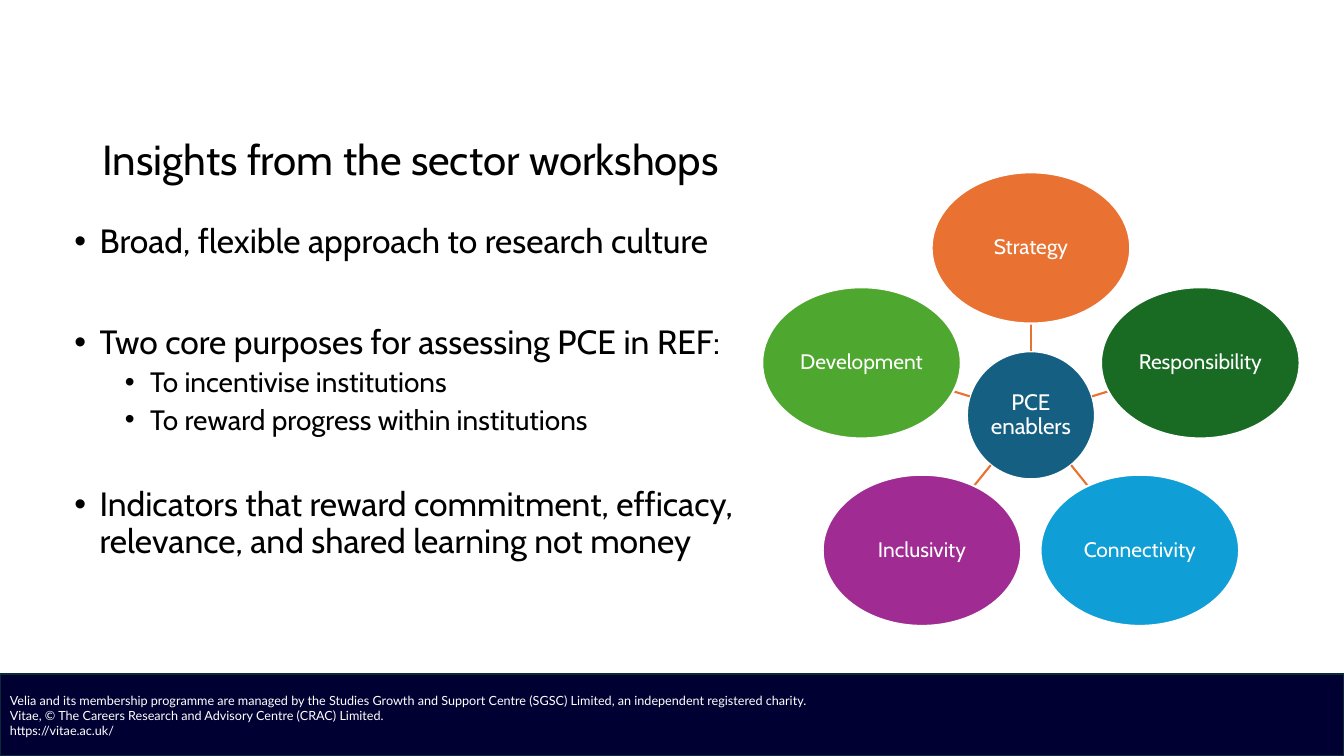
from math import hypot

from lxml import etree
from pptx import Presentation
from pptx.dml.color import RGBColor
from pptx.enum.shapes import MSO_CONNECTOR, MSO_SHAPE
from pptx.enum.text import MSO_ANCHOR, PP_ALIGN
from pptx.oxml.ns import qn
from pptx.util import Inches, Pt

OVAL = MSO_SHAPE.OVAL
RECTANGLE = MSO_SHAPE.RECTANGLE
STRAIGHT = MSO_CONNECTOR.STRAIGHT
MIDDLE = MSO_ANCHOR.MIDDLE
LEFT = PP_ALIGN.LEFT
CENTER = PP_ALIGN.CENTER

BLACK = RGBColor(0x00, 0x00, 0x00)
WHITE = RGBColor(0xFF, 0xFF, 0xFF)
NAVY = RGBColor(0x01, 0x00, 0x32)
DARK_TEAL = RGBColor(0x09, 0x2A, 0x39)
BLUE = RGBColor(0x15, 0x60, 0x82)
ORANGE = RGBColor(0xE9, 0x71, 0x32)
DARK_GREEN = RGBColor(0x19, 0x6B, 0x24)
SKY = RGBColor(0x0F, 0x9E, 0xD5)
PURPLE = RGBColor(0xA0, 0x2B, 0x93)
GREEN = RGBColor(0x4E, 0xA7, 0x2E)

FOOTER_LINES = [
    "Velia and its membership programme are managed by the Studies Growth and Support Centre (SGSC) Limited, an independent registered charity.",
    "Vitae, © The Careers Research and Advisory Centre (CRAC) Limited.",
    "https://vitae.ac.uk/",
]

BULLETS = [
    ("Broad, flexible approach to research culture", 0, 0),
    ("Two core purposes for assessing PCE in REF:", 0, 46),
    ("To incentivise institutions", 1, 5),
    ("To reward progress within institutions", 1, 5),
    ("Indicators that reward commitment, efficacy,\v"
     "relevance, and shared learning not money", 0, 37),
]
LEVEL_SIZES = [24, 20]
LEVEL_INDENTS = [0.25, 0.75]

HUB_DIAMETER = 1.27
PETAL_WIDTH, PETAL_HEIGHT = 1.97, 1.5
PETALS = [
    ("Strategy", ORANGE, 0, -1.66),
    ("Responsibility", DARK_GREEN, 1.68, -0.52),
    ("Connectivity", SKY, 1.08, 1.34),
    ("Inclusivity", PURPLE, -1.08, 1.34),
    ("Development", GREEN, -1.68, -0.52),
]


def set_font(paragraph, size, color, name="Cabin"):
    for attribute, value in {"size": Pt(size), "name": name}.items():
        setattr(paragraph.font, attribute, value)
    paragraph.font.color.rgb = color


def add_bullet(paragraph, indent):
    properties = paragraph._p.get_or_add_pPr()
    properties.set("marL", str(Inches(indent)))
    properties.set("indent", str(Inches(-0.25)))
    etree.SubElement(properties, qn("a:buFont")).set("typeface", "Arial")
    etree.SubElement(properties, qn("a:buChar")).set("char", "•")


def add_filled_shape(slide, kind, box, fill, line):
    shape = slide.shapes.add_shape(kind, *map(Inches, box))
    shape.shadow.inherit = False
    shape.fill.solid()
    shape.fill.fore_color.rgb = fill
    shape.line.color.rgb = line
    shape.line.width = Pt(1.5)
    shape.text_frame.word_wrap = True
    shape.text_frame.vertical_anchor = MIDDLE
    return shape


def add_text_frame(slide, box):
    text_frame = slide.shapes.add_textbox(*map(Inches, box)).text_frame
    text_frame.word_wrap = True
    return text_frame


def add_footer(slide, box):
    bar = add_filled_shape(slide, RECTANGLE, box, NAVY, DARK_TEAL)
    bar.text_frame.text = "\n".join(FOOTER_LINES)
    for paragraph in bar.text_frame.paragraphs:
        paragraph.alignment = LEFT
        set_font(paragraph, 9, WHITE, "Lato")


def add_title(slide, box):
    text_frame = add_text_frame(slide, box)
    text_frame.vertical_anchor = MIDDLE
    paragraph = text_frame.paragraphs[0]
    paragraph.text = "Insights from the sector workshops"
    paragraph.line_spacing = 0.9
    set_font(paragraph, 30, BLACK)


def add_body(slide, box):
    text_frame = add_text_frame(slide, box)
    for index, (text, level, space_before) in enumerate(BULLETS):
        paragraph = text_frame.add_paragraph() if index else text_frame.paragraphs[0]
        paragraph.text = text
        paragraph.level = level
        paragraph.line_spacing = 0.9
        if space_before:
            paragraph.space_before = Pt(space_before)
        add_bullet(paragraph, LEVEL_INDENTS[level])
        set_font(paragraph, LEVEL_SIZES[level], BLACK)


def add_ellipse(slide, center_x, center_y, width, height, text, fill, size):
    box = (center_x - width / 2, center_y - height / 2, width, height)
    text_frame = add_filled_shape(slide, OVAL, box, fill, WHITE).text_frame
    for side in ("left", "top", "right", "bottom"):
        setattr(text_frame, f"margin_{side}", Inches(0.01))
    paragraph = text_frame.paragraphs[0]
    paragraph.text = text
    paragraph.alignment = CENTER
    paragraph.line_spacing = 0.9
    set_font(paragraph, size, WHITE)


def add_spoke(slide, center_x, center_y, offset_x, offset_y):
    distance = hypot(offset_x, offset_y)
    unit_x, unit_y = offset_x / distance, offset_y / distance
    petal_reach = 1 / hypot(2 * unit_x / PETAL_WIDTH, 2 * unit_y / PETAL_HEIGHT)
    ends = []
    for radius in (HUB_DIAMETER / 2, distance - petal_reach):
        ends += [Inches(center_x + radius * unit_x), Inches(center_y + radius * unit_y)]
    connector = slide.shapes.add_connector(STRAIGHT, *ends)
    connector.line.color.rgb = ORANGE
    connector.line.width = Pt(1.5)
    etree.SubElement(connector._element.spPr, qn("a:effectLst"))


def add_enablers(slide, box):
    left, top, width, height = box
    center_x = left + width / 2
    center_y = top + PETAL_HEIGHT / 2 - PETALS[0][3]
    add_ellipse(slide, center_x, center_y, HUB_DIAMETER, HUB_DIAMETER,
                "PCE enablers", BLUE, 16)
    for text, color, offset_x, offset_y in PETALS:
        add_spoke(slide, center_x, center_y, offset_x, offset_y)
        add_ellipse(slide, center_x + offset_x, center_y + offset_y,
                    PETAL_WIDTH, PETAL_HEIGHT, text, color, 15)


def main():
    presentation = Presentation()
    presentation.slide_width = Inches(13.33)
    presentation.slide_height = Inches(7.5)
    slide = presentation.slides.add_slide(presentation.slide_layouts[6])
    add_footer(slide, (0, 6.69, 13.33, 0.81))
    add_title(slide, (0.92, 1.25, 11.5, 0.71))
    add_body(slide, (0.64, 2.18, 11.28, 4.37))
    add_enablers(slide, (7.56, 1.71, 5.33, 4.49))
    presentation.save("out.pptx")


if __name__ == "__main__":
    main()
